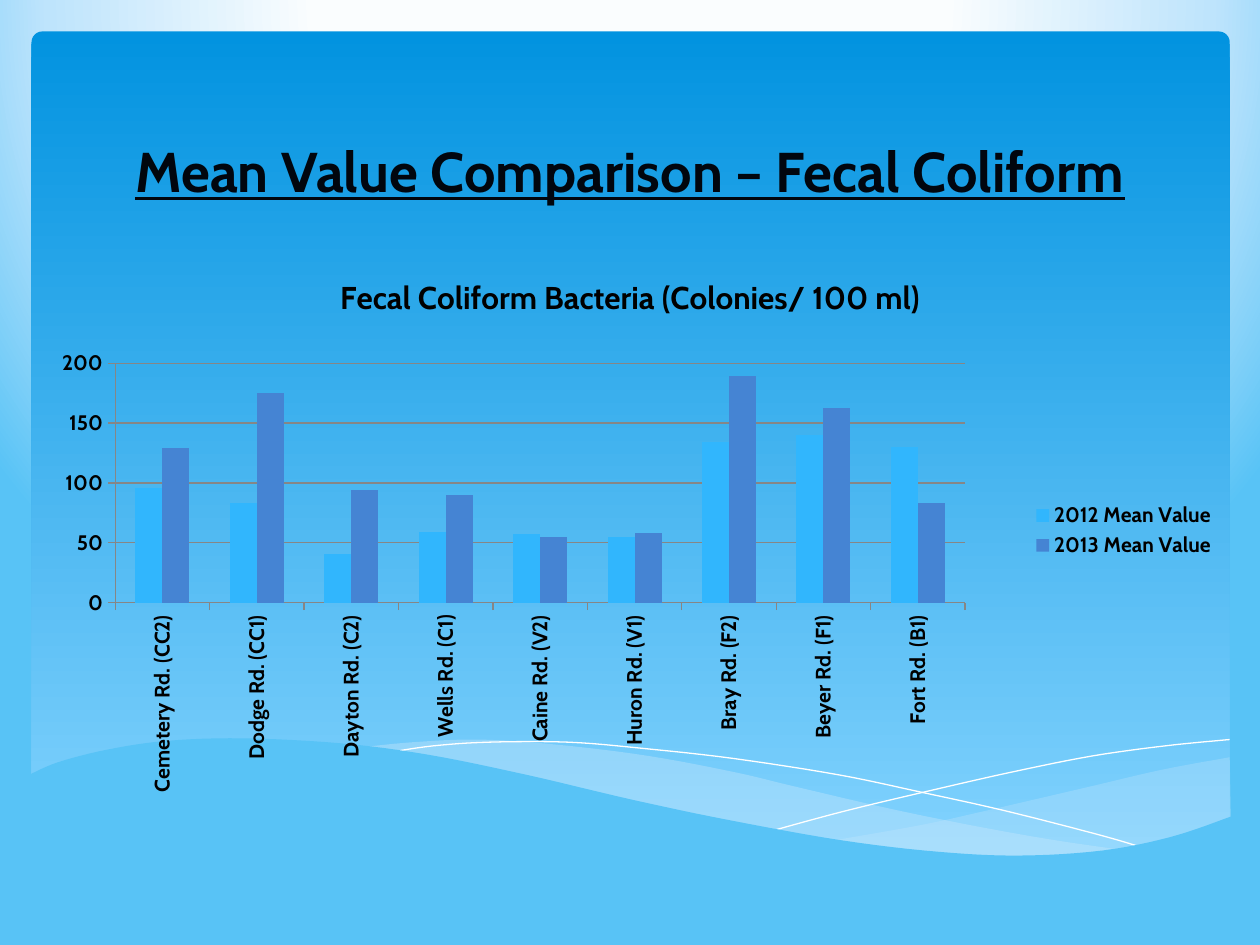
from dataclasses import dataclass

from pptx import Presentation
from pptx.chart.data import CategoryChartData
from pptx.dml.color import RGBColor
from pptx.enum.chart import XL_CHART_TYPE, XL_LEGEND_POSITION, XL_TICK_MARK
from pptx.enum.shapes import MSO_SHAPE
from pptx.enum.text import MSO_ANCHOR, MSO_AUTO_SIZE, PP_ALIGN
from pptx.oxml import parse_xml
from pptx.oxml.ns import nsdecls, qn
from pptx.util import Pt

CLUSTERED = XL_CHART_TYPE.COLUMN_CLUSTERED
LEGEND_RIGHT = XL_LEGEND_POSITION.RIGHT
TICK_OUT = XL_TICK_MARK.OUTSIDE
ROUNDED = MSO_SHAPE.ROUNDED_RECTANGLE
BOTTOM = MSO_ANCHOR.BOTTOM
NO_FIT = MSO_AUTO_SIZE.NONE
CENTER = PP_ALIGN.CENTER


@dataclass(frozen=True)
class Theme:
    font: str = "Cabin"
    heading: str = "01060E"
    text: str = "000000"
    grid: str = "868686"
    wave: str = "58C3F6"
    swell: str = "C6E7FC"
    strand: str = "FFFFFF"
    glow: tuple = ((40, "FAFDFE"), (74, "BEE4FC"), (100, "58C3F6"))
    panel: tuple = ("0293E0", "83D3FE")
    series: tuple = ("31B6FD", "4584D3")
    heading_size: int = 32
    chart_title_size: int = 18
    label_size: int = 12
    base_size: int = 10


RIGHT_SWELL = [
    [(702.7, 432.7), (663.8, 439.9), (620.6, 450), (561.6, 463.7), (525.6, 471.6), (476.6, 480.2)],
    [(476.6, 480.2), (508.3, 484.6), (545.8, 488.2), (586.8, 489.6), (622.1, 487.4),
     (653, 483.1), (679.7, 475.9), (703.4, 467.3)],
]
MIDDLE_SWELL = [
    [(206.6, 427), (236.2, 424.1), (273.6, 422.6), (318.2, 425.5), (370.8, 432), (420.5, 441.4),
     (453.6, 449.3), (509, 462.2), (558.7, 472.3), (603.4, 480.2), (643.7, 486)],
    [(643.7, 486), (611.3, 488.9), (573.8, 489.6), (530.6, 487.4), (479.5, 481), (421.2, 470.9),
     (353.5, 456.5), (307.4, 445), (261.4, 434.9), (206.6, 427)],
]
FALLING_STRAND = [
    [(223.2, 429.8), (247.7, 426.2), (279.4, 424.1), (324.7, 424.1), (367.9, 427.7), (419, 433.4),
     (479.5, 442.8), (524.2, 452.2), (573.1, 463), (626.4, 476.6), (654, 484.6)],
]
RISING_STRAND = [
    [(442.1, 474.5), (484.6, 463), (539.3, 450), (581, 440.6), (624.2, 432), (666, 426.2),
     (702.7, 422.6)],
]
FRONT_WAVE = [
    [(703.4, 466.6), (669.6, 478.1), (630, 486), (582.5, 488.9), (535.7, 486.7), (481, 480.2),
     (416.9, 468.7), (362.2, 457.2), (301, 442.8), (244.8, 431.3), (195.1, 424.8), (139, 421.9),
     (95, 423.4), (61.2, 428.4), (33.1, 435.6), (16.6, 442.8)],
    [(16.6, 526.3), (703.4, 526.3)],
]
SITES = ["Cemetery Rd. (CC2)", "Dodge Rd. (CC1)", "Dayton Rd. (C2)", "Wells Rd. (C1)",
         "Caine Rd. (V2)", "Huron Rd. (V1)", "Bray Rd. (F2)", "Beyer Rd. (F1)", "Fort Rd. (B1)"]
MEANS = {
    "2012 Mean Value": [96, 83, 41, 59, 57, 55, 134, 140, 130],
    "2013 Mean Value": [129, 175, 94, 90, 55, 58, 189, 163, 83],
}


def apply(target, values):
    """Set each named attribute of the target."""
    for name, value in values.items():
        setattr(target, name, value)


def smooth(knots, steps=6):
    """Return points along a Catmull-Rom curve through the knots."""
    padded = [knots[0], *knots, knots[-1]]
    points = [knots[0]]
    for a, b, c, d in zip(padded, padded[1:], padded[2:], padded[3:]):
        for step in range(1, steps + 1):
            t = step / steps
            points.append(tuple(
                (2 * q + (r - p) * t + (2 * p - 5 * q + 4 * r - s) * t**2
                 + (3 * q - p - 3 * r + s) * t**3) / 2
                for p, q, r, s in zip(a, b, c, d)))
    return points


class SlideBuilder:
    """Draw styled elements on one slide."""

    def __init__(self, slide, theme):
        self.slide, self.theme = slide, theme

    def style_font(self, font, size, color, **extra):
        """Apply the theme font with a size and colour."""
        apply(font, {"name": self.theme.font, "size": Pt(size), **extra})
        font.color.rgb = RGBColor.from_string(color)

    def background(self):
        """Fill the slide with a glow from the top."""
        stops = "".join(f'<a:gs pos="{pos * 1000}"><a:srgbClr val="{color}"/></a:gs>'
                        for pos, color in self.theme.glow)
        self.slide.element.cSld.insert(0, parse_xml(
            f'<p:bg {nsdecls("p", "a")}><p:bgPr><a:gradFill rotWithShape="1">'
            f'<a:gsLst>{stops}</a:gsLst><a:path path="circle">'
            '<a:fillToRect l="20000" t="-40000" r="20000" b="140000"/></a:path>'
            '</a:gradFill><a:effectLst/></p:bgPr></p:bg>'))

    def panel(self, *box):
        """Add the rounded panel with a vertical gradient."""
        panel = self.slide.shapes.add_shape(ROUNDED, *map(Pt, box))
        panel.adjustments[0] = 0.013
        panel.shadow.inherit = False
        panel.line.fill.background()
        panel.fill.gradient()
        panel.fill.gradient_angle = 270
        for position, (stop, color) in enumerate(zip(panel.fill.gradient_stops, self.theme.panel)):
            stop.position = position
            stop.color.rgb = RGBColor.from_string(color)

    def curve(self, curves, closed):
        """Add a freeform that runs through smoothed curves."""
        start, *rest = [(Pt(x), Pt(y)) for knots in curves for x, y in smooth(knots)]
        outline = self.slide.shapes.build_freeform(*start)
        outline.add_line_segments(rest, close=closed)
        shape = outline.convert_to_shape()
        shape.shadow.inherit = False
        return shape

    def wave(self, curves, color, opacity=100):
        """Add a filled wave."""
        wave = self.curve(curves, True)
        wave.line.fill.background()
        wave.fill.solid()
        wave.fill.fore_color.rgb = RGBColor.from_string(color)
        if opacity < 100:
            tint = wave.element.spPr.find(".//" + qn("a:srgbClr"))
            tint.append(parse_xml(f'<a:alpha {nsdecls("a")} val="{opacity * 1000}"/>'))

    def strand(self, curves):
        """Add a hairline curve."""
        strand = self.curve(curves, False)
        strand.fill.background()
        strand.line.color.rgb = RGBColor.from_string(self.theme.strand)
        strand.line.width = Pt(0)

    def title(self, text, left, top, width, height):
        """Place the title above the backdrop."""
        title = self.slide.shapes.title
        self.slide.shapes.element.append(title.element)
        apply(title, {"left": Pt(left), "top": Pt(top), "width": Pt(width), "height": Pt(height)})
        frame = title.text_frame
        apply(frame, {"text": text, "vertical_anchor": BOTTOM, "auto_size": NO_FIT,
                      "word_wrap": True})
        heading = frame.paragraphs[0]
        heading.alignment = CENTER
        self.style_font(heading.runs[0].font, self.theme.heading_size, self.theme.heading,
                        bold=True, underline=True)

    def axis(self, axis):
        """Style the line, ticks and labels of an axis."""
        axis.major_tick_mark = TICK_OUT
        axis.format.line.color.rgb = RGBColor.from_string(self.theme.grid)
        self.style_font(axis.tick_labels.font, self.theme.label_size, self.theme.text, bold=True)

    def column_chart(self, heading, categories, series, box, plot_box):
        """Add a clustered column chart with a right-hand legend."""
        theme = self.theme
        data = CategoryChartData()
        data.categories = categories
        for name, values in series.items():
            data.add_series(name, values)
        chart = self.slide.shapes.add_chart(CLUSTERED, *map(Pt, box), data).chart
        self.style_font(chart.font, theme.base_size, theme.text)
        apply(chart, {"has_title": True, "has_legend": True})
        chart.chart_title.text_frame.text = heading
        self.style_font(chart.chart_title.text_frame.paragraphs[0].runs[0].font,
                        theme.chart_title_size, theme.text, bold=True)
        apply(chart.legend, {"position": LEGEND_RIGHT, "include_in_layout": False})
        self.style_font(chart.legend.font, theme.label_size, theme.text, bold=True)
        counts = chart.value_axis
        for axis in (chart.category_axis, counts):
            self.axis(axis)
        apply(counts, {"minimum_scale": 0, "maximum_scale": 200, "major_unit": 50,
                       "has_major_gridlines": True})
        counts.major_gridlines.format.line.color.rgb = RGBColor.from_string(theme.grid)
        plot = chart.plots[0]
        apply(plot, {"gap_width": 150, "overlap": 0, "vary_by_categories": False})
        for columns, color in zip(plot.series, theme.series):
            columns.format.fill.solid()
            columns.format.fill.fore_color.rgb = RGBColor.from_string(color)
        area = chart.element.find(".//" + qn("c:plotArea"))
        label_body = area.find(f'{qn("c:catAx")}/{qn("c:txPr")}/{qn("a:bodyPr")}')
        for name, value in {"rot": "-5400000", "vert": "horz"}.items():
            label_body.set(name, value)
        for old in area.findall(qn("c:layout")):
            area.remove(old)
        places = "".join(f'<c:{tag} val="{value}"/>' for tag, value in
                         [("layoutTarget", "inner"), ("xMode", "edge"), ("yMode", "edge"),
                          *zip("xywh", plot_box)])
        area.insert(0, parse_xml(f'<c:layout {nsdecls("c")}><c:manualLayout>{places}'
                                 '</c:manualLayout></c:layout>'))


def main():
    """Build and save the slide."""
    deck = Presentation()
    apply(deck, {"slide_width": Pt(720), "slide_height": Pt(540)})
    theme = Theme()
    page = SlideBuilder(deck.slides.add_slide(deck.slide_layouts[5]), theme)
    page.background()
    page.panel(18, 18, 684.7, 475.2)
    page.wave(RIGHT_SWELL, theme.swell, 29)
    page.wave(MIDDLE_SWELL, theme.swell, 40)
    page.strand(FALLING_STRAND)
    page.strand(RISING_STRAND)
    page.wave(FRONT_WAVE, theme.wave)
    page.title("Mean Value Comparison – Fecal Coliform", 54, 66.24, 612, 54)
    page.column_chart("Fecal Coliform Bacteria (Colonies/ 100 ml)", SITES, MEANS,
                      (18, 144, 684, 318.24), (0.07, 0.2, 0.71, 0.43))
    deck.save("out.pptx")


if __name__ == "__main__":
    main()
